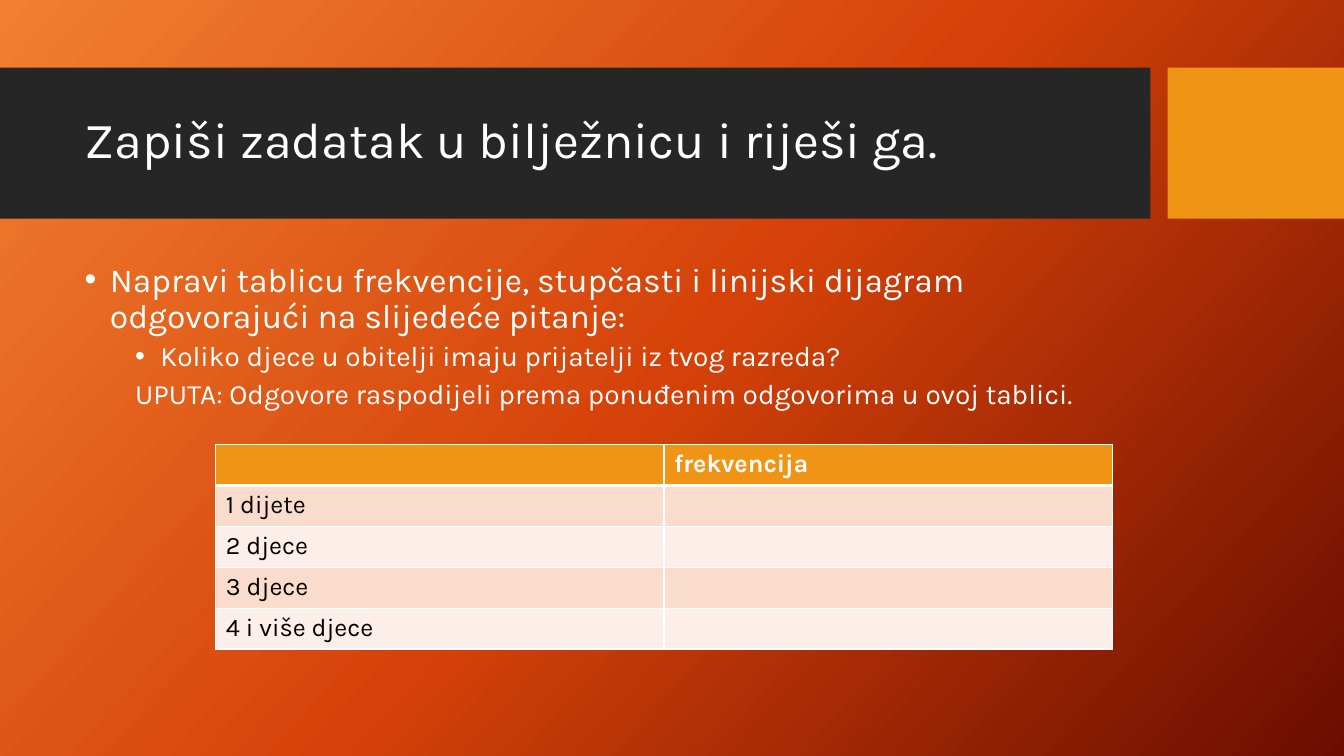
"""Builds a slide with a frequency table exercise."""
from copy import deepcopy

from lxml import etree
from pptx import Presentation
from pptx.dml.color import RGBColor
from pptx.enum import shapes, text
from pptx.oxml import ns
from pptx.util import Inches, Pt

THEME = {
    "font": "Karla",
    "title": 36, "lead": 24, "detail": 20, "cell": 18,
    "white": "FFFFFF", "black": "000000", "band": "262626", "accent": "F09415",
    "rows": ["FCEEE8", "F9DCCC"],
    "gradient": [(0, "F18031"), (0.5, "D54209"), (1, "6A0D00")],
}


def add_run(p, words, size, color="white", bold=False):
    r = p.add_run()
    r.text = words
    look = {"name": THEME["font"], "size": Pt(THEME[size]), "bold": bold}
    for key, value in look.items():
        setattr(r.font, key, value)
    r.font.color.rgb = RGBColor.from_string(THEME[color])


def place(sp, left, top, width, height):
    box = {"left": left, "top": top, "width": width, "height": height}
    for key, value in box.items():
        setattr(sp, key, Inches(value))


prs = Presentation()
prs.slide_width, prs.slide_height = Inches(13.33), Inches(7.5)
s = prs.slides.add_slide(prs.slide_layouts[1])

fill = s.background.fill
fill.gradient()
fill.gradient_angle = 360 - 42
first_stop = fill.gradient_stops[0]
gs_list = fill._fill._gradFill.find(ns.qn("a:gsLst"))
gs_list.insert(1, deepcopy(gs_list[0]))
for stop, (position, color) in zip(fill.gradient_stops, THEME["gradient"]):
    stop.position = position
    stop.color.rgb = RGBColor.from_string(color)

for i, (left, width, color) in enumerate([(0, 11.41, "band"), (11.58, 1.75, "accent")]):
    sp = s.shapes.add_shape(shapes.MSO_SHAPE.RECTANGLE, Inches(left), Inches(0.67),
                            Inches(width), Inches(1.5))
    sp.shadow.inherit = False
    sp.fill.solid()
    sp.fill.fore_color.rgb = RGBColor.from_string(THEME[color])
    sp.line.fill.background()
    s.shapes.element.insert(2 + i, sp.element)

title = s.shapes.title
place(title, 0.74, 0.82, 10.51, 1.18)
body = s.placeholders[1]
place(body, 0.74, 2.56, 10.51, 3.94)
for sp, anchor in [(title, text.MSO_ANCHOR.MIDDLE), (body, text.MSO_ANCHOR.TOP)]:
    frame = {"word_wrap": True, "auto_size": text.MSO_AUTO_SIZE.NONE, "vertical_anchor": anchor}
    for key, value in frame.items():
        setattr(sp.text_frame, key, value)

p = title.text_frame.paragraphs[0]
p.alignment = text.PP_ALIGN.LEFT
p.line_spacing = 0.9
add_run(p, "Zapiši zadatak u bilježnicu i riješi ga.", "title")

TASKS = [
    ("Napravi tablicu frekvencije, stupčasti i linijski dijagram "
     "odgovorajući na slijedeće pitanje:", 0, "lead", 0.25, -0.25, 0),
    ("Koliko djece u obitelji imaju prijatelji iz tvog razreda?", 1, "detail", 0.75, -0.25, 5),
    ("UPUTA: Odgovore raspodijeli prema ponuđenim odgovorima u ovoj tablici.",
     1, "detail", 0.5, 0, 5),
]
tf = body.text_frame
for i, (words, level, size, margin, indent, before) in enumerate(TASKS):
    p = tf.add_paragraph() if i else tf.paragraphs[0]
    pPr = p._p.get_or_add_pPr()
    pPr.set("marL", str(Inches(margin)))
    pPr.set("indent", str(Inches(indent)))
    if indent:
        etree.SubElement(pPr, ns.qn("a:buFont"), typeface="Arial")
        etree.SubElement(pPr, ns.qn("a:buChar"), char="•")
    else:
        etree.SubElement(pPr, ns.qn("a:buNone"))
    spacing = {"level": level, "line_spacing": 0.9, "space_before": Pt(before),
               "space_after": Pt(0), "alignment": text.PP_ALIGN.LEFT}
    for key, value in spacing.items():
        setattr(p, key, value)
    add_run(p, words, size)

ROWS = [("", "frekvencija"), ("1 dijete", ""), ("2 djece", ""), ("3 djece", ""),
        ("4 i više djece", "")]
table = s.shapes.add_table(len(ROWS), 2, Inches(2.14), Inches(4.41),
                           Inches(8.89), Inches(2.03)).table
for i, row in enumerate(ROWS):
    for j, words in enumerate(row):
        cell = table.cell(i, j)
        tcPr = cell._tc.get_or_add_tcPr()
        for side in "LRTB":
            thick = (i, side) in [(0, "B"), (1, "T")]
            ln = etree.SubElement(tcPr, ns.qn("a:ln" + side), w=str(Pt(3 if thick else 1)))
            line_fill = etree.SubElement(ln, ns.qn("a:solidFill"))
            etree.SubElement(line_fill, ns.qn("a:srgbClr"), val=THEME["white"])
        cell.fill.solid()
        cell.fill.fore_color.rgb = RGBColor.from_string(
            THEME["rows"][i % 2] if i else THEME["accent"])
        if words:
            add_run(cell.text_frame.paragraphs[0], words, "cell",
                    "black" if i else "white", bold=i == 0)

prs.save("out.pptx")
